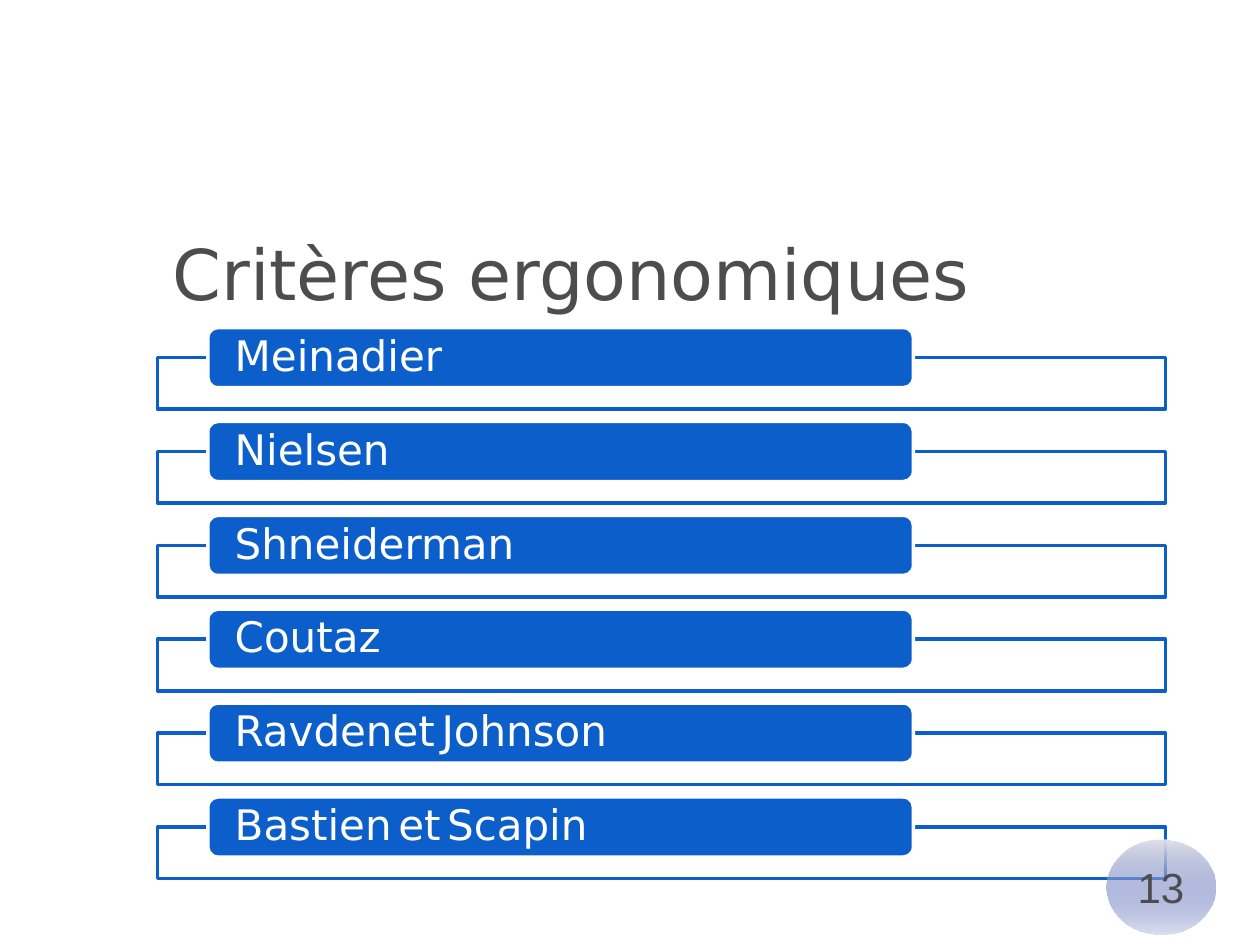
from lxml.etree import SubElement
from pptx import Presentation
from pptx.dml.color import RGBColor
from pptx.enum.shapes import MSO_SHAPE
from pptx.enum.text import MSO_ANCHOR, MSO_AUTO_SIZE, PP_ALIGN
from pptx.oxml.ns import qn
from pptx.util import Inches, Pt

BLUE = RGBColor(0x0C, 0x5F, 0xCA)
WHITE = RGBColor(0xFF, 0xFF, 0xFF)
GREY = RGBColor(0x4D, 0x4D, 0x4D)
PALE = RGBColor(0xDF, 0xE0, 0xEA)
NAVY = RGBColor(0x14, 0x2F, 0x9E)
FONT = "DejaVu Sans"
SPACE_FONT = "Times New Roman"
AUTHORS = ["Meinadier", "Nielsen", "Shneiderman", "Coutaz",
           "Ravdenet Johnson", "Bastien et Scapin"]


def add_run(paragraph, text, size, color, font=FONT):
    run = paragraph.add_run()
    run.text = text
    run.font.name = font
    run.font.size = Pt(size)
    run.font.color.rgb = color


def set_alpha(color_holder, percent):
    """Give the colour inside a fill or gradient stop an opacity."""
    color = next(color_holder.iter(qn("a:srgbClr")))
    SubElement(color, qn("a:alpha")).set("val", str(percent * 1000))


def add_box(slide, preset, left, top, width, height, fill, line):
    shape = slide.shapes.add_shape(
        preset, Inches(left), Inches(top), Inches(width), Inches(height))
    shape.shadow.inherit = False
    shape.fill.solid()
    shape.fill.fore_color.rgb = fill
    shape.line.color.rgb = line
    shape.line.width = Pt(2)
    return shape


def add_title(slide, left, top, width, height):
    title = slide.shapes.title
    title.left, title.top = Inches(left), Inches(top)
    title.width, title.height = Inches(width), Inches(height)
    frame = title.text_frame
    frame.auto_size = MSO_AUTO_SIZE.NONE
    frame.vertical_anchor = MSO_ANCHOR.MIDDLE
    paragraph = frame.paragraphs[0]
    properties = paragraph._p.get_or_add_pPr()
    properties.set("marL", str(Inches(0.5)))
    properties.set("indent", str(Inches(-0.5)))
    paragraph.alignment = PP_ALIGN.LEFT
    paragraph.line_spacing = 1.5
    add_run(paragraph, "Critères ergonomiques", 40, GREY)


def add_author(slide, name, left, top, width, row_height):
    """Draw one row: an outlined frame with a name label over its top edge."""
    label_height = 0.64 * row_height
    frame_box = add_box(slide, MSO_SHAPE.RECTANGLE, left, top + label_height / 2,
                        width, 0.55 * row_height, WHITE, BLUE)
    set_alpha(frame_box.fill._xPr.find(qn("a:solidFill")), 90)

    label = add_box(slide, MSO_SHAPE.ROUNDED_RECTANGLE, left + 0.05 * width, top,
                    0.7 * width, label_height, BLUE, WHITE)
    frame = label.text_frame
    frame.word_wrap = True
    frame.vertical_anchor = MSO_ANCHOR.MIDDLE
    frame.margin_left = frame.margin_right = Inches(0.19)
    frame.margin_top = frame.margin_bottom = 0
    paragraph = frame.paragraphs[0]
    paragraph.alignment = PP_ALIGN.LEFT
    paragraph.line_spacing = 0.9
    for index, word in enumerate(name.split()):
        if index:
            add_run(paragraph, " ", 15, WHITE, SPACE_FONT)
        add_run(paragraph, word, 24, WHITE)


def add_author_list(slide, left, top, width, height):
    row_height = height / len(AUTHORS)
    for index, name in enumerate(AUTHORS):
        add_author(slide, name, left, top + index * row_height, width, row_height)


def add_page_number(slide, left, top, width, height):
    badge = add_box(slide, MSO_SHAPE.OVAL, left, top, width, height, PALE, PALE)
    badge.line.fill.background()
    badge.fill.gradient()
    badge.fill.gradient_angle = 270
    for stop, position, color in zip(badge.fill.gradient_stops, (0, 1), (PALE, NAVY)):
        stop.position = position
        stop.color.rgb = color
    set_alpha(badge.fill._xPr.findall(".//" + qn("a:gs"))[-1], 15)
    frame = badge.text_frame
    frame.word_wrap = False
    frame.vertical_anchor = MSO_ANCHOR.MIDDLE
    paragraph = frame.paragraphs[0]
    paragraph.alignment = PP_ALIGN.CENTER
    add_run(paragraph, "13", 24, GREY, "Arial")


def main():
    presentation = Presentation()
    presentation.slide_width = Inches(10)
    presentation.slide_height = Inches(7.5)
    slide = presentation.slides.add_slide(presentation.slide_layouts[5])
    add_title(slide, 1.27, 1.61, 8, 0.78)
    add_author_list(slide, 1.25, 2.6, 8, 4.47)
    add_page_number(slide, 8.78, 6.66, 0.87, 0.76)
    presentation.save("out.pptx")


if __name__ == "__main__":
    main()
